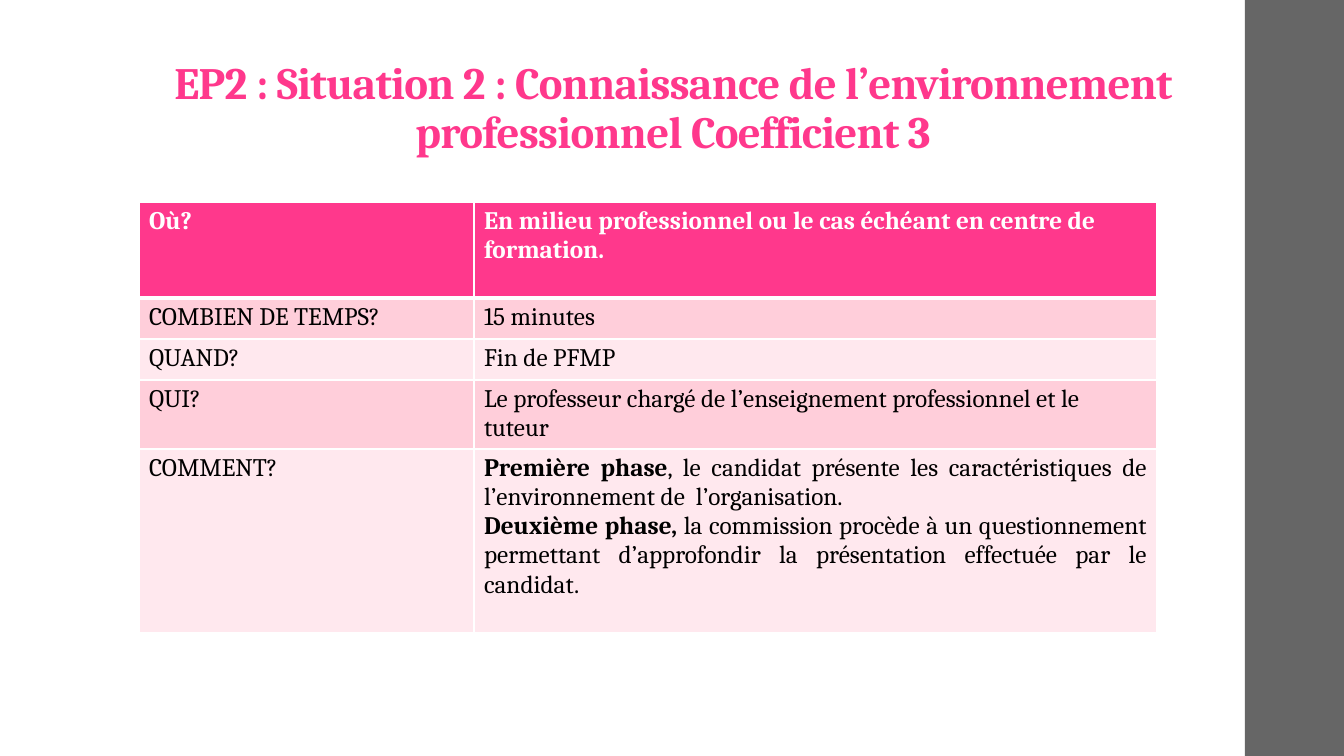
"""Build the slide on the EP2 exam, situation 2, with its table of conditions."""
import pptx
import pptx.dml.color
import pptx.enum.shapes
import pptx.enum.text
import pptx.oxml
import pptx.util
from pptx.oxml.ns import nsdecls

PINK = pptx.dml.color.RGBColor(0xFF, 0x38, 0x8C)
ROSE = pptx.dml.color.RGBColor(0xFF, 0xCE, 0xDA)
PALE = pptx.dml.color.RGBColor(0xFF, 0xE8, 0xEE)
GREY = pptx.dml.color.RGBColor(0x66, 0x66, 0x66)
WHITE = pptx.dml.color.RGBColor(0xFF, 0xFF, 0xFF)
BLACK = pptx.dml.color.RGBColor(0, 0, 0)
FONT = "Cambria"
ALIGN = pptx.enum.text.PP_ALIGN


def px(length):
    return pptx.util.Emu(round(length * 914400 / 100.8))


def add_border(cell, side, points):
    cell.fill._xPr.append(pptx.oxml.parse_xml(
        f'<a:{side} {nsdecls("a")} w="{points * 12700}"><a:solidFill>'
        f'<a:srgbClr val="{WHITE}"/></a:solidFill></a:{side}>'))


deck = pptx.Presentation()
deck.slide_width, deck.slide_height = px(1344), px(756)
page = deck.slides.add_slide(deck.slide_layouts[5])

band = page.shapes.add_shape(
    pptx.enum.shapes.MSO_SHAPE.RECTANGLE, px(1245), px(0), px(99), px(756))
band.shadow.inherit = False
band.fill.solid()
band.fill.fore_color.rgb = GREY
band.line.fill.background()

title = page.shapes.title
title.left, title.top, title.width, title.height = px(139), px(57), px(1068), px(158)
box = title.text_frame
box.word_wrap = True
box.auto_size = pptx.enum.text.MSO_AUTO_SIZE.NONE
box.vertical_anchor = pptx.enum.text.MSO_ANCHOR.BOTTOM
box.margin_left = box.margin_right = px(10)
box.margin_top, box.margin_bottom = px(3), px(57)
para = box.paragraphs[0]
para.alignment = ALIGN.CENTER
para.line_spacing = 0.9
para.font.name = FONT
para.font.size = pptx.util.Pt(32)
para.font.bold = True
para.font.color.rgb = PINK
span = para.add_run()
span.text = "EP2 : Situation 2 : Connaissance de l’environnement professionnel Coefficient 3"
span.font._element.set("spc", "-50")

ROWS = [
    (96, "Où?", [("", "En milieu professionnel ou le cas échéant en centre de formation.")]),
    (41, "COMBIEN DE TEMPS?", [("", "15 minutes")]),
    (41, "QUAND?", [("", "Fin de PFMP")]),
    (69, "QUI?", [("", "Le professeur chargé de l’enseignement professionnel et le tuteur")]),
    (184, "COMMENT?", [
        ("Première phase", ", le candidat présente les caractéristiques de "
                           "l’environnement de  l’organisation."),
        ("Deuxième phase,", " la commission procède à un questionnement permettant "
                            "d’approfondir la présentation effectuée par le candidat."),
    ]),
]
table = page.shapes.add_table(len(ROWS), 2, px(139), px(202), px(1018), px(431)).table
for column, width in zip(table.columns, (335, 683)):
    column.width = px(width)

for number, (height, question, answer) in enumerate(ROWS):
    table.rows[number].height = px(height)
    header = number == 0
    for cell, lines in zip(table.rows[number].cells, ([("", question)], answer)):
        add_border(cell, "a:lnL"[2:], 1)
        add_border(cell, "lnR", 1)
        add_border(cell, "lnT", 3 if number == 1 else 1)
        add_border(cell, "lnB", 3 if header else 1)
        cell.fill.solid()
        cell.fill.fore_color.rgb = PINK if header else ROSE if number % 2 else PALE
        for index, (lead, text) in enumerate(lines):
            frame = cell.text_frame
            para = frame.add_paragraph() if index else frame.paragraphs[0]
            para.alignment = ALIGN.JUSTIFY if lead else ALIGN.LEFT
            para.font.name = FONT
            para.font.size = pptx.util.Pt(18)
            para.font.bold = header
            para.font.color.rgb = WHITE if header else BLACK
            if lead:
                span = para.add_run()
                span.text = lead
                span.font.bold = True
            para.add_run().text = text

deck.save("out.pptx")
